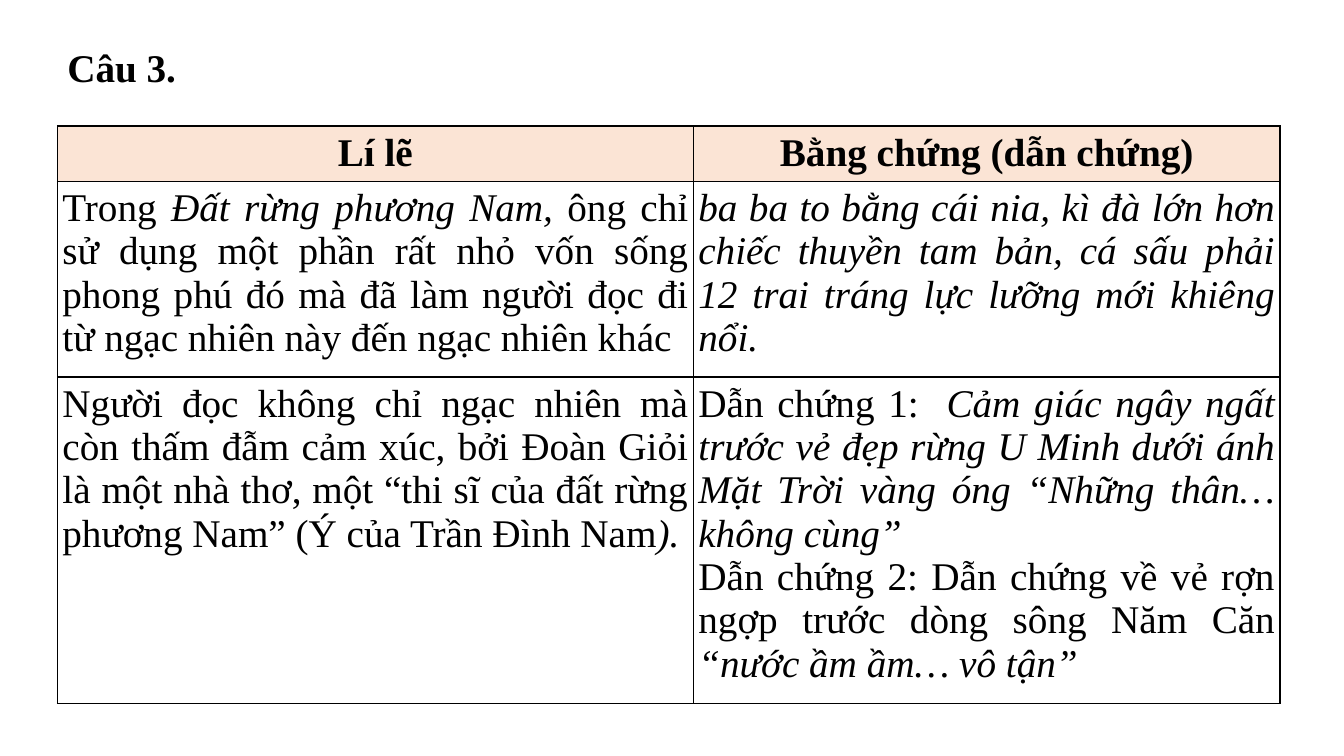
from pptx import Presentation
from pptx.dml.color import RGBColor
from pptx.enum.text import MSO_AUTO_SIZE, PP_ALIGN
from pptx.oxml import parse_xml
from pptx.oxml.ns import nsdecls
from pptx.util import Pt

BLACK = RGBColor(0x00, 0x00, 0x00)
PEACH = RGBColor(0xFB, 0xE4, 0xD5)
BASE_FONT = {"name": "Times New Roman", "size": Pt(28)}
CELL_INSETS = {"margin_left": Pt(3.6), "margin_top": Pt(3.6),
               "margin_right": Pt(3.6), "margin_bottom": Pt(3.6)}
PLAIN = {"bold": False, "italic": False}
ITALIC = {"bold": False, "italic": True}
BOLD = {"bold": True}


def add_runs(paragraph, runs):
    for text, style in runs:
        run = paragraph.add_run()
        run.text = text
        for key, value in {**BASE_FONT, **style}.items():
            setattr(run.font, key, value)
        run.font.color.rgb = BLACK


def add_borders(cell):
    for position, side in enumerate(("lnL", "lnR", "lnT", "lnB")):
        border = parse_xml(
            f'<a:{side} {nsdecls("a")} w="{Pt(1)}"><a:solidFill>'
            f'<a:srgbClr val="{BLACK}"/></a:solidFill></a:{side}>')
        cell._tc.get_or_add_tcPr().insert(position, border)


deck = Presentation()
deck.slide_width, deck.slide_height = Pt(960), Pt(540)
slide = deck.slides.add_slide(deck.slide_layouts[6])

# Each cell is a list of paragraphs, each paragraph a list of styled runs
rows = [
    [[[("Lí lẽ", BOLD)]], [[("Bằng chứng (dẫn chứng)", BOLD)]]],
    [
        [[("Trong ", PLAIN), ("Đất rừng phương Nam,", ITALIC),
          (" ông chỉ sử dụng một phần rất nhỏ vốn sống phong phú đó mà đã làm "
           "người đọc đi từ ngạc nhiên này đến ngạc nhiên khác", PLAIN)]],
        [[("ba ba to bằng cái nia, kì đà lớn hơn chiếc thuyền tam bản, cá sấu "
           "phải 12 trai tráng lực lưỡng mới khiêng nổi.", ITALIC)]],
    ],
    [
        [[("Người đọc không chỉ ngạc nhiên mà còn thấm đẫm cảm xúc, bởi Đoàn "
           "Giỏi là một nhà thơ, một “thi sĩ của đất rừng phương Nam” "
           "(Ý của Trần Đình Nam", PLAIN), (").", ITALIC)]],
        [[("Dẫn chứng 1:  ", PLAIN),
          ("Cảm giác ngây ngất trước vẻ đẹp rừng U Minh dưới ánh Mặt Trời "
           "vàng óng “Những thân… không cùng”", ITALIC)],
         [("Dẫn chứng 2: Dẫn chứng về vẻ rợn ngợp trước dòng sông Năm Căn", PLAIN),
          (" “nước ầm ầm… vô tận”", ITALIC)]],
    ],
]
column_widths = [454.3, 419]
row_heights = [39.6, 139.7, 233.3]

# Table of arguments and evidence
arguments = slide.shapes.add_table(
    len(rows), len(column_widths), Pt(41), Pt(90),
    Pt(sum(column_widths)), Pt(sum(row_heights))).table
arguments.first_row = arguments.horz_banding = False
for column, width in zip(arguments.columns, column_widths):
    column.width = Pt(width)

for r, (row, height) in enumerate(zip(rows, row_heights)):
    arguments.rows[r].height = Pt(height)
    for c, paragraphs in enumerate(row):
        cell = arguments.cell(r, c)
        for key, value in CELL_INSETS.items():
            setattr(cell, key, value)
        if r == 0:
            cell.fill.solid()
            cell.fill.fore_color.rgb = PEACH
        else:
            cell.fill.background()
        add_borders(cell)
        for p, runs in enumerate(paragraphs):
            frame = cell.text_frame
            paragraph = frame.add_paragraph() if p else frame.paragraphs[0]
            paragraph.alignment = PP_ALIGN.JUSTIFY if r else PP_ALIGN.CENTER
            add_runs(paragraph, runs)

# Question heading
heading = slide.shapes.add_textbox(Pt(41), Pt(10.8), Pt(100), Pt(51.8)).text_frame
heading.word_wrap = False
heading.auto_size = MSO_AUTO_SIZE.SHAPE_TO_FIT_TEXT
question = heading.paragraphs[0]
question.line_spacing = 1.5
question.space_after = Pt(18)
add_runs(question, [("Câu 3.", BOLD)])

deck.save("out.pptx")
